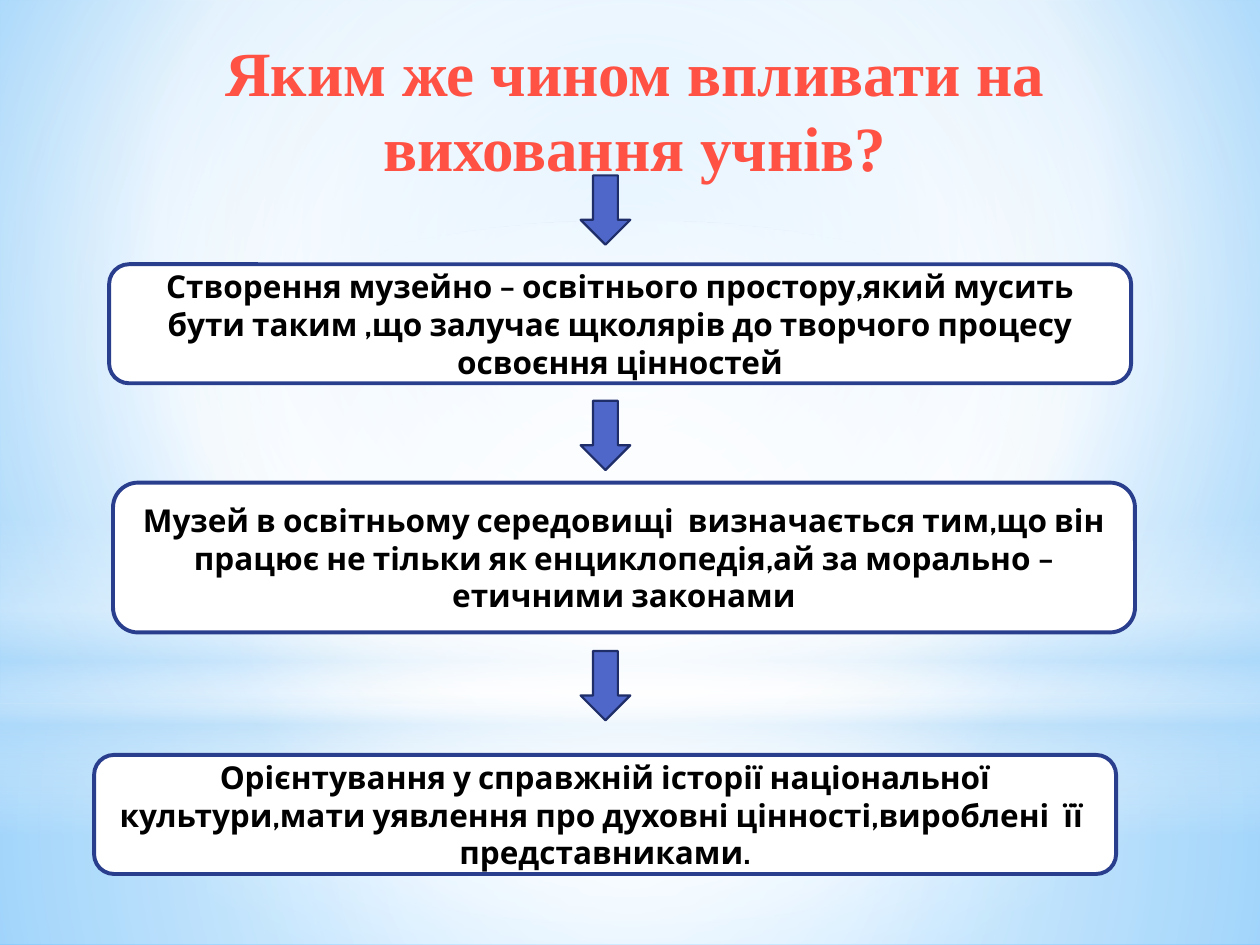
from dataclasses import dataclass

from pptx import Presentation
from pptx.dml.color import RGBColor
from pptx.enum.shapes import MSO_SHAPE
from pptx.enum.text import MSO_ANCHOR, PP_ALIGN
from pptx.oxml import parse_xml
from pptx.oxml.ns import nsdecls, qn
from pptx.util import Pt

RECT, OVAL = MSO_SHAPE.RECTANGLE, MSO_SHAPE.OVAL
CARD, ARROW = MSO_SHAPE.FLOWCHART_ALTERNATE_PROCESS, MSO_SHAPE.DOWN_ARROW
MIDDLE, CENTER = MSO_ANCHOR.MIDDLE, PP_ALIGN.CENTER


@dataclass(frozen=True)
class Theme:
    white: str = "FFFFFF"
    pale: str = "B4DCFA"
    sky: str = "9ED5FF"
    deep: str = "5BB9FF"
    title: str = "FF5244"
    ink: str = "000000"
    edge: str = "2A3E8E"
    arrow: str = "4E67C8"
    rim: str = "1F2E69"
    head: str = "Times New Roman"
    body: str = "Cabin"
    big: int = 36
    mid: int = 18


@dataclass(frozen=True)
class Glow:
    form: int
    top: float
    high: float
    stops: tuple  # (position %, colour, opacity %)
    focus: tuple | None = (50, 50, 50, 50)  # None gives a vertical blend


@dataclass(frozen=True)
class Step:
    left: float
    top: float
    high: float
    text: str


T = Theme()
WIDE, TALL = 720, 540
CARD_W = 584
ARROW_X, ARROW_W, ARROW_H = 331.8, 28.4, 39.6

GLOWS = (
    Glow(RECT, 402, 138, ((0, T.white, 91), (37, T.white, 76), (100, T.pale, 79))),
    Glow(RECT, 0, 402, ((0, T.white, 89), (48, T.white, 62), (100, T.pale, 79))),
    Glow(RECT, 296.6, 180, ((0, T.white, 0), (29, T.white, 30), (45, T.pale, 40),
                            (55, T.white, 26), (65, T.pale, 60), (100, T.white, 0)), None),
    Glow(OVAL, 126, 402, ((0, T.white, 100), (56, T.white, 0))),
)
STEPS = (
    Step(62.4, 151, 68, "Створення музейно – освітнього простору,який мусить бути таким ,"
         "що залучає щколярів до творчого процесу освоєння цінностей"),
    Step(64.6, 275.8, 85.6, "Музей в освітньому середовищі  визначається тим,що він працює "
         "не тільки як енциклопедія,ай за морально – етичними законами"),
    Step(53.8, 431.4, 68, "Орієнтування у справжній історії національної культури,мати "
         "уявлення про духовні цінності,вироблені  її  представниками."),
)
ARROWS = (100.2, 229, 372)


def rgb(code: str) -> RGBColor:
    return RGBColor.from_string(code)


def blend(node, stops: tuple, focus: tuple | None) -> None:
    """Swap the first solid fill inside node for a gradient."""
    marks = "".join(
        f'<a:gs pos="{pos * 1000}"><a:srgbClr val="{code}">'
        f'<a:alpha val="{alpha * 1000}"/></a:srgbClr></a:gs>'
        for pos, code, alpha in stops)
    if focus:
        sides = " ".join(f'{k}="{v * 1000}"' for k, v in zip("ltrb", focus))
        mode = f'<a:path path="circle"><a:fillToRect {sides}/></a:path>'
    else:
        mode = '<a:lin ang="5400000" scaled="0"/>'
    old = next(node.iter(qn("a:solidFill")))
    new = parse_xml(f'<a:gradFill {nsdecls("a")} rotWithShape="1">'
                    f'<a:gsLst>{marks}</a:gsLst>{mode}</a:gradFill>')
    old.getparent().replace(old, new)


def write(shape, text: str, *, font: str, size: float, color: str,
          pitch: float | None = None) -> None:
    """Set centred bold text in a shape."""
    frame = shape.text_frame
    frame.word_wrap = True
    frame.vertical_anchor = MIDDLE
    para = frame.paragraphs[0]
    para.alignment = CENTER
    if pitch:
        para.line_spacing = Pt(pitch)
    run = para.add_run()
    run.text = text
    run.font.name, run.font.size, run.font.bold = font, Pt(size), True
    run.font.color.rgb = rgb(color)


def draw(slide, form: int, left: float, top: float, wide: float, high: float,
         fill: str, line: str | None = None, weight: float = 0):
    shape = slide.shapes.add_shape(form, Pt(left), Pt(top), Pt(wide), Pt(high))
    shape.shadow.inherit = False
    shape.fill.solid()
    shape.fill.fore_color.rgb = rgb(fill)
    if line:
        shape.line.color.rgb = rgb(line)
        shape.line.width = Pt(weight)
    else:
        shape.line.fill.background()
    return shape


def main() -> None:
    deck = Presentation()
    deck.slide_width, deck.slide_height = Pt(WIDE), Pt(TALL)
    slide = deck.slides.add_slide(deck.slide_layouts[5])

    # Background and soft light
    slide.background.fill.solid()
    blend(slide.element, ((0, T.sky, 100), (60, T.white, 100), (100, T.deep, 100)),
          (20, 10, 20, 60))
    for glow in GLOWS:
        shape = draw(slide, glow.form, 0, glow.top, WIDE, glow.high, T.white)
        blend(shape.element, glow.stops, glow.focus)

    # Title, raised above the light
    title = slide.shapes.title
    title.left, title.top, title.width, title.height = Pt(87.8), Pt(15.1), Pt(550), Pt(94.4)
    write(title, "Яким же чином впливати на виховання учнів?",
          font=T.head, size=T.big, color=T.title, pitch=42.9)
    slide.shapes.element.append(title.element)

    # Steps and the arrows leading to them
    for step in STEPS:
        card = draw(slide, CARD, step.left, step.top, CARD_W, step.high, T.white, T.edge, 2.25)
        write(card, step.text, font=T.body, size=T.mid, color=T.ink)
    for top in ARROWS:
        draw(slide, ARROW, ARROW_X, top, ARROW_W, ARROW_H, T.arrow, T.rim, 1.25)

    deck.save("out.pptx")


if __name__ == "__main__":
    main()
